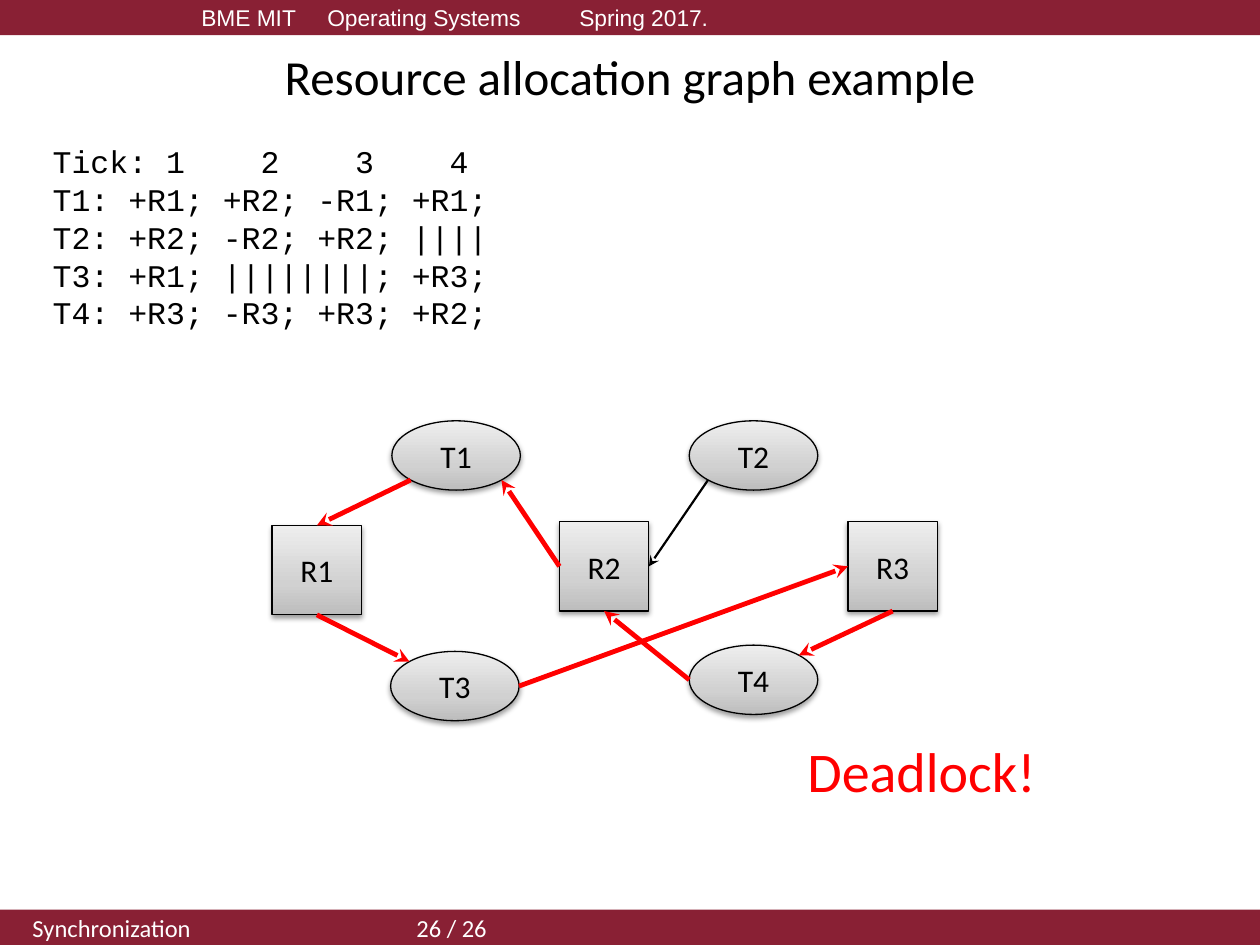
from copy import deepcopy
from dataclasses import dataclass
from math import sqrt

from lxml.etree import SubElement
from pptx import Presentation
from pptx.dml.color import RGBColor
from pptx.enum.shapes import MSO_CONNECTOR, MSO_SHAPE
from pptx.enum.text import MSO_ANCHOR, PP_ALIGN
from pptx.oxml.ns import qn
from pptx.util import Inches, Pt

COLORS = {
    "bar": "892034",
    "white": "FFFFFF",
    "black": "000000",
    "red": "FF0000",
    "dark": "BDBDBD",
    "mid": "D1D1D1",
    "light": "EEEEEE",
}
BAR_H = 0.28
TASK_W, TASK_H, RES_SIZE = 1.02, 0.55, 0.71

# Directions from the centre of a node
TOP, LEFT, BOTTOM, RIGHT = (0, -1), (-1, 0), (0, 1), (1, 0)
TOP_LEFT, TOP_RIGHT, BOTTOM_LEFT = (-1, -1), (1, -1), (-1, 1)
RECT_SITES = {TOP: 0, LEFT: 1, BOTTOM: 2, RIGHT: 3}


@dataclass
class Node:
    name: str
    x: float
    y: float

    @property
    def is_task(self) -> bool:
        return self.name.startswith("T")

    @property
    def size(self) -> tuple[float, float]:
        return (TASK_W, TASK_H) if self.is_task else (RES_SIZE, RES_SIZE)

    def anchor(self, direction: tuple[int, int]) -> tuple[float, float]:
        """Point on the outline; diagonals lie at 45 degrees on an ellipse."""
        dx, dy = direction
        k = sqrt(0.5) if dx and dy else 1
        w, h = self.size
        return self.x + w / 2 * (1 + k * dx), self.y + h / 2 * (1 + k * dy)


@dataclass
class Edge:
    start: str
    leave: tuple[int, int]
    end: str
    enter: tuple[int, int]
    color: str = "red"
    width: float = 2.75


NODES = {n.name: n for n in [
    Node("T1", 3.11, 3.34),
    Node("T2", 5.47, 3.34),
    Node("T3", 3.1, 5.17),
    Node("T4", 5.47, 5.12),
    Node("R1", 2.16, 4.17),
    Node("R2", 4.44, 4.14),
    Node("R3", 6.73, 4.14),
]}
EDGES = [
    Edge("R2", LEFT, "T1", (1, 1)),
    Edge("R1", BOTTOM, "T3", TOP_LEFT),
    Edge("T2", BOTTOM_LEFT, "R2", RIGHT, "black", 1.25),
    Edge("R3", BOTTOM, "T4", TOP_RIGHT),
    Edge("T1", BOTTOM_LEFT, "R1", TOP),
    Edge("T3", RIGHT, "R3", LEFT),
    Edge("T4", LEFT, "R2", BOTTOM),
]
SCHEDULE = [
    "Tick: 1    2    3    4",
    "T1: +R1; +R2; -R1; +R1;",
    "T2: +R2; -R2; +R2; ||||",
    "T3: +R1; ||||||||; +R3;",
    "T4: +R3; -R3; +R3; +R2;",
]


def rgb(name: str) -> RGBColor:
    return RGBColor.from_string(COLORS[name])


def add_run(p, text: str, size: float, color: str = "black", font: str = "Calibri") -> None:
    r = p.add_run()
    r.text = text
    r.font.size = Pt(size)
    r.font.name = font
    r.font.color.rgb = rgb(color)


def add_text(s, box: tuple, lines: list[str], size: float, color: str = "black",
             font: str = "Calibri", wrap: bool = True):
    tf = s.shapes.add_textbox(*map(Inches, box)).text_frame
    tf.word_wrap = wrap
    for i, line in enumerate(lines):
        p = tf.add_paragraph() if i else tf.paragraphs[0]
        add_run(p, line, size, color, font)
    return tf


def add_bar(s, y: float, indent: float, runs: list[tuple]) -> None:
    """Full-width band whose text is laid out on one-inch tab stops."""
    sp = s.shapes.add_shape(MSO_SHAPE.RECTANGLE, 0, Inches(y), Inches(10), Inches(BAR_H))
    sp.shadow.inherit = False
    sp.fill.solid()
    sp.fill.fore_color.rgb = rgb("bar")
    sp.line.fill.background()
    sp.text_frame.vertical_anchor = MSO_ANCHOR.MIDDLE
    p = sp.text_frame.paragraphs[0]
    p.alignment = PP_ALIGN.LEFT
    pPr = p._p.get_or_add_pPr()
    pPr.set("marL", str(Inches(indent)))
    pPr.set("indent", "0")
    pPr.set("defTabSz", str(Inches(1)))
    for text, size, font in runs:
        add_run(p, text, size, "white", font)


def fill_gradient(sp) -> None:
    sp.fill.gradient()
    sp.fill.gradient_angle = 90
    stops = sp._element.spPr.find(qn("a:gradFill")).find(qn("a:gsLst"))
    stops.insert(1, deepcopy(stops[0]))
    for stop, pos, color in zip(sp.fill.gradient_stops, (0, 0.35, 1), ("dark", "mid", "light")):
        stop.position = pos
        stop.color.rgb = rgb(color)


def add_shadow(sp) -> None:
    sp.shadow.inherit = False
    effects = sp._element.spPr.find(qn("a:effectLst"))
    shadow = SubElement(effects, qn("a:outerShdw"), blurRad=str(Pt(3.1)), dist=str(Pt(1.6)),
                        dir="5400000", rotWithShape="0")
    color = SubElement(shadow, qn("a:srgbClr"), val=COLORS["black"])
    SubElement(color, qn("a:alpha"), val="38000")


def add_node(s, node: Node):
    kind = MSO_SHAPE.OVAL if node.is_task else MSO_SHAPE.RECTANGLE
    sp = s.shapes.add_shape(kind, *map(Inches, (node.x, node.y, *node.size)))
    fill_gradient(sp)
    sp.line.color.rgb = rgb("black")
    sp.line.width = Pt(0.75)
    add_shadow(sp)
    sp.text_frame.vertical_anchor = MSO_ANCHOR.MIDDLE
    p = sp.text_frame.paragraphs[0]
    p.alignment = PP_ALIGN.CENTER
    add_run(p, node.name, 18)
    return sp


def add_edge(s, edge: Edge, shapes: dict) -> None:
    start, end = NODES[edge.start], NODES[edge.end]
    points = start.anchor(edge.leave) + end.anchor(edge.enter)
    c = s.shapes.add_connector(MSO_CONNECTOR.STRAIGHT, *map(Inches, points))
    if not start.is_task:
        c.begin_connect(shapes[edge.start], RECT_SITES[edge.leave])
    if not end.is_task:
        c.end_connect(shapes[edge.end], RECT_SITES[edge.enter])
    c.line.color.rgb = rgb(edge.color)
    c.line.width = Pt(edge.width)
    SubElement(c.line._get_or_add_ln(), qn("a:tailEnd"), type="stealth")
    SubElement(c._element.spPr, qn("a:effectLst"))


def main() -> None:
    prs = Presentation()
    prs.slide_width, prs.slide_height = Inches(10), Inches(7.5)
    s = prs.slides.add_slide(prs.slide_layouts[6])

    add_bar(s, 0, 1.5, [("BME MIT\tOperating Systems\tSpring 2017.", 13, "Arial")])
    add_bar(s, 7.5 - BAR_H, 0.16, [("Synchronization", 14, "Calibri"),
                                   ("\t\t ", 13, "Noto Sans"),
                                   ("26 / 26", 14, "Calibri")])
    title = add_text(s, (0.5, 0.3, 9, 0.61), ["Resource allocation graph example"], 28)
    title.vertical_anchor = MSO_ANCHOR.MIDDLE
    title.paragraphs[0].alignment = PP_ALIGN.CENTER

    shapes = {name: add_node(s, node) for name, node in NODES.items()}
    add_text(s, (0.32, 1.08, 3.67, 1.62), SCHEDULE, 18, font="Courier New", wrap=False)
    for edge in EDGES:
        add_edge(s, edge, shapes)
    add_text(s, (6.31, 5.8, 2.13, 0.64), ["Deadlock!"], 32, "red")
    prs.save("out.pptx")


if __name__ == "__main__":
    main()
